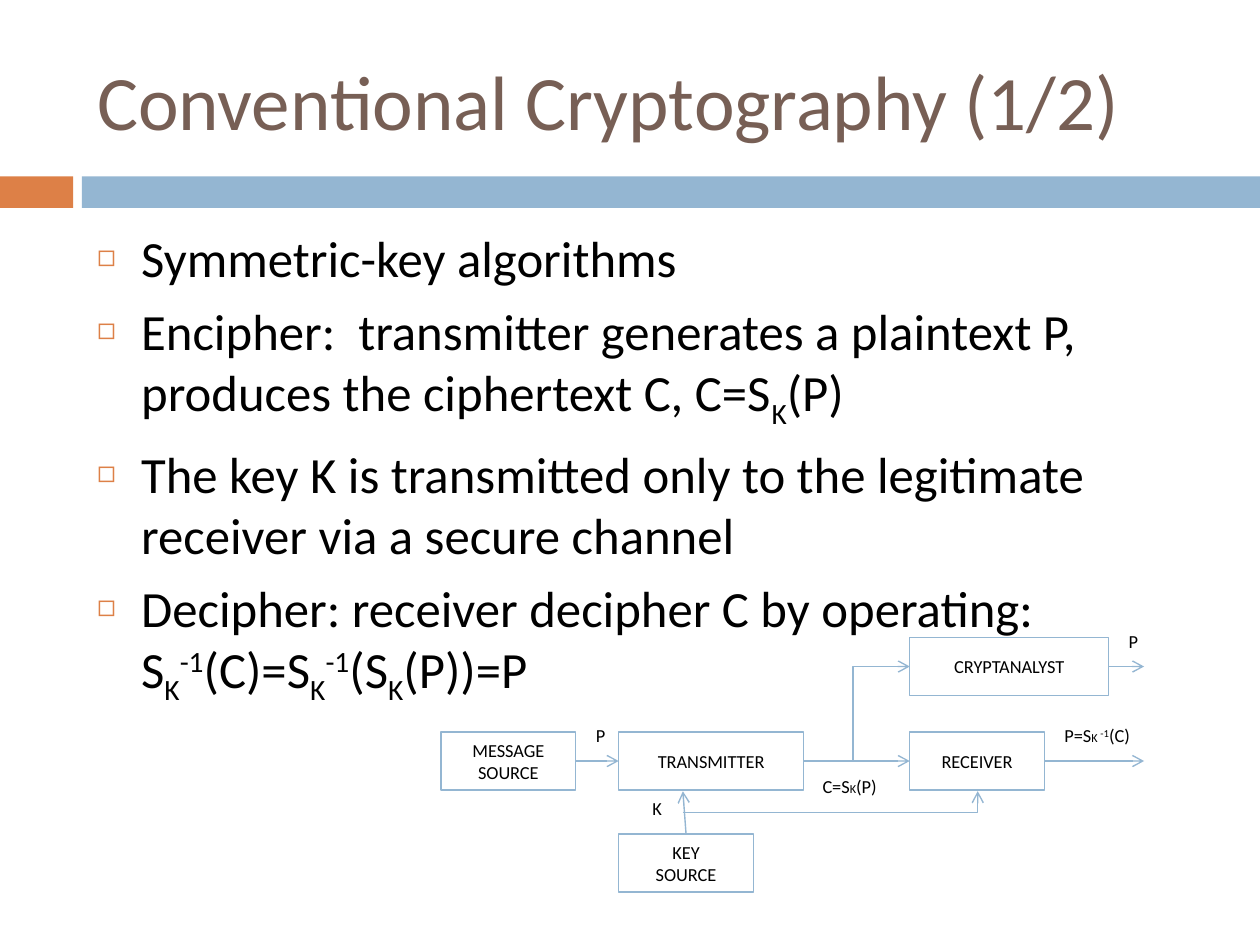
from dataclasses import dataclass

from lxml.etree import SubElement
from pptx import Presentation
from pptx.dml.color import RGBColor
from pptx.enum.shapes import MSO_CONNECTOR, MSO_SHAPE
from pptx.enum.text import MSO_ANCHOR, MSO_AUTO_SIZE, PP_ALIGN
from pptx.oxml.ns import qn
from pptx.util import Inches, Pt


@dataclass(frozen=True)
class Theme:
    font: str = "Calibri"
    title: str = "775F55"
    text: str = "000000"
    accent: str = "DD8047"
    line: str = "94B6D2"
    title_size: float = 44
    body_size: float = 29
    label_size: float = 10.5
    small_size: float = 7
    box_line: float = 0.75
    arrow_line: float = 0.79


@dataclass(frozen=True)
class Area:
    left: float
    top: float
    width: float
    height: float
    columns: float = 1
    rows: float = 1

    def point(self, column, row):
        return (Inches(self.left + column * self.width / self.columns),
                Inches(self.top + row * self.height / self.rows))

    def bounds(self, column, row, columns, rows):
        return (*self.point(column, row),
                Inches(columns * self.width / self.columns),
                Inches(rows * self.height / self.rows))


THEME = Theme()
SUB, SUPER = -25, 30
BOX_HEIGHT = 9.2
MAIN_ROW, MAIN_MIDDLE = 17.2, 21.8
TOP_ROW, TOP_MIDDLE = 2.2, 6.8
BRANCH_COLUMN, KEY_COLUMN, EXIT_COLUMN = 65.4, 38.4, 111.6

BULLETS = [
    ["Symmetric-key algorithms"],
    ["Encipher:  transmitter generates a plaintext P, produces the ciphertext C, C=S",
     ("K", SUB), "(P)"],
    ["The key K is transmitted only to the legitimate receiver via a secure channel"],
    ["Decipher: receiver decipher C by operating:", "\n", "S", ("K", SUB), ("-1", SUPER),
     "(C)=S", ("K", SUB), ("-1", SUPER), "(S", ("K", SUB), "(P))=P"],
]
BOXES = {
    "transmitter": (["TRANSMITTER"], 28.2, MAIN_ROW, 29.4),
    "source": (["MESSAGE", "SOURCE"], 0, MAIN_ROW, 21.4),
    "key": (["KEY", "SOURCE"], 28.2, 33.4, 21.4),
    "receiver": (["RECEIVER"], 74.4, MAIN_ROW, 21.4),
    "cryptanalyst": (["CRYPTANALYST"], 74.4, TOP_ROW, 31.6),
}
SMALL = THEME.small_size
LABELS = [
    (["P"], 22.6, 15, 5),
    (["K"], 31.6, 26.6, 5),
    (["C=S", ("K", 0, SMALL), "(P)"], 58.6, 23, 14.6),
    (["P=S", ("K ", 0, SMALL), ("-1", SUPER), "(C)"], 97, 15, 18),
    (["P"], 107.2, 0, 5),
]


def color(value):
    return RGBColor.from_string(value)


def add_span(para, text, size, tint=THEME.text, baseline=0):
    span = para.add_run()
    span.text = text
    span.font.name = THEME.font
    span.font.size = Pt(size)
    span.font.color.rgb = color(tint)
    if baseline:
        span._r.get_or_add_rPr().set("baseline", str(baseline * 1000))


def add_spans(para, pieces, size):
    for piece in pieces:
        if piece == "\n":
            para.add_line_break()
            continue
        text, baseline, *own_size = (piece, 0) if isinstance(piece, str) else piece
        add_span(para, text, own_size[0] if own_size else size, baseline=baseline)


def place(shape, bounds):
    shape.left, shape.top, shape.width, shape.height = bounds


def add_bullet(para):
    properties = para._p.get_or_add_pPr()
    properties.set("marL", str(Inches(0.35)))
    properties.set("indent", str(-Inches(0.35)))
    tint = SubElement(properties, qn("a:buClr"))
    SubElement(tint, qn("a:srgbClr")).set("val", THEME.accent)
    SubElement(properties, qn("a:buSzPct")).set("val", "60000")
    SubElement(properties, qn("a:buChar")).set("char", "◻")


def add_rectangle(page, bounds):
    box = page.shapes.add_shape(MSO_SHAPE.RECTANGLE, *bounds)
    box.shadow.inherit = False
    return box


def build_band(page, area):
    for column, columns, fill in ((0, 0.58, THEME.accent), (0.65, 9.35, THEME.line)):
        bar = add_rectangle(page, area.bounds(column, 0, columns, 1))
        bar.fill.solid()
        bar.fill.fore_color.rgb = color(fill)
        bar.line.fill.background()


def build_title(page, area):
    title = page.shapes.title
    place(title, area.bounds(0, 0, 1, 1))
    frame = title.text_frame
    frame.auto_size = MSO_AUTO_SIZE.NONE
    frame.vertical_anchor = MSO_ANCHOR.MIDDLE
    para = frame.paragraphs[0]
    para.alignment = PP_ALIGN.LEFT
    add_span(para, "Conventional Cryptography (1/2)", THEME.title_size, THEME.title)


def build_body(page, area):
    body = page.placeholders[1]
    place(body, area.bounds(0, 0, 1, 1))
    frame = body.text_frame
    frame.auto_size = MSO_AUTO_SIZE.NONE
    for index, pieces in enumerate(BULLETS):
        para = frame.paragraphs[0] if index == 0 else frame.add_paragraph()
        para.space_before = Pt(7)
        add_bullet(para)
        add_spans(para, pieces, THEME.body_size)


def add_box(page, area, lines, column, row, columns):
    box = add_rectangle(page, area.bounds(column, row, columns, BOX_HEIGHT))
    box.fill.background()
    box.line.color.rgb = color(THEME.line)
    box.line.width = Pt(THEME.box_line)
    frame = box.text_frame
    frame.vertical_anchor = MSO_ANCHOR.MIDDLE
    for index, text in enumerate(lines):
        para = frame.paragraphs[0] if index == 0 else frame.add_paragraph()
        para.alignment = PP_ALIGN.CENTER
        add_span(para, text, THEME.label_size)
    return box


def add_arrow(page, start, end, kind=MSO_CONNECTOR.STRAIGHT):
    arrow = page.shapes.add_connector(kind, *start, *end)
    arrow.line.color.rgb = color(THEME.line)
    arrow.line.width = Pt(THEME.arrow_line)
    SubElement(arrow.line._get_or_add_ln(), qn("a:tailEnd")).set("type", "arrow")
    SubElement(arrow._element.spPr, qn("a:effectLst"))
    return arrow


def add_bend(page, start, end, upright=False):
    if upright:
        middle_x, middle_y = (start[0] + end[0]) // 2, (start[1] + end[1]) // 2
        half_run, half_rise = abs(end[1] - start[1]) // 2, abs(end[0] - start[0]) // 2
        start = middle_x + half_run, middle_y + half_rise
        end = middle_x - half_run, middle_y - half_rise
    arrow = add_arrow(page, start, end, MSO_CONNECTOR.ELBOW)
    properties = arrow._element.spPr
    properties.find(qn("a:prstGeom")).set("prst", "bentConnector2")
    if upright:
        properties.find(qn("a:xfrm")).set("rot", str(90 * 60000))


def build_diagram(page, area):
    boxes = {name: add_box(page, area, *details) for name, details in BOXES.items()}
    links = [
        ("source", 3, "transmitter", 1, None),
        ("key", 0, None, None, (KEY_COLUMN, 26.6)),
        ("transmitter", 3, "receiver", 1, None),
        ("receiver", 3, None, None, (EXIT_COLUMN, MAIN_MIDDLE)),
        ("cryptanalyst", 3, None, None, (EXIT_COLUMN, TOP_MIDDLE)),
    ]
    for origin, origin_side, target, target_side, end in links:
        spot = area.point(*(end or (0, 0)))
        arrow = add_arrow(page, spot, spot)
        arrow.begin_connect(boxes[origin], origin_side)
        if target:
            arrow.end_connect(boxes[target], target_side)
    add_bend(page, area.point(KEY_COLUMN, 30), area.point(85.2, 26.6))
    add_bend(page, area.point(BRANCH_COLUMN, MAIN_MIDDLE),
             area.point(74.4, TOP_MIDDLE), upright=True)
    for pieces, column, row, columns in LABELS:
        label = page.shapes.add_textbox(*area.bounds(column, row, columns, 4))
        label.text_frame.word_wrap = True
        add_spans(label.text_frame.paragraphs[0], pieces, THEME.label_size)


def main():
    deck = Presentation()
    deck.slide_width, deck.slide_height = Inches(10), Inches(7.5)
    page = deck.slides.add_slide(deck.slide_layouts[1])
    build_band(page, Area(0, 1.4, 10, 0.25, columns=10))
    build_title(page, Area(0.67, 0.25, 8.92, 1.08))
    build_body(page, Area(0.67, 1.75, 8.92, 4.92))
    build_diagram(page, Area(3.5, 4.95, 5.75, 2.13, columns=115, rows=42.6))
    deck.save("out.pptx")


if __name__ == "__main__":
    main()
